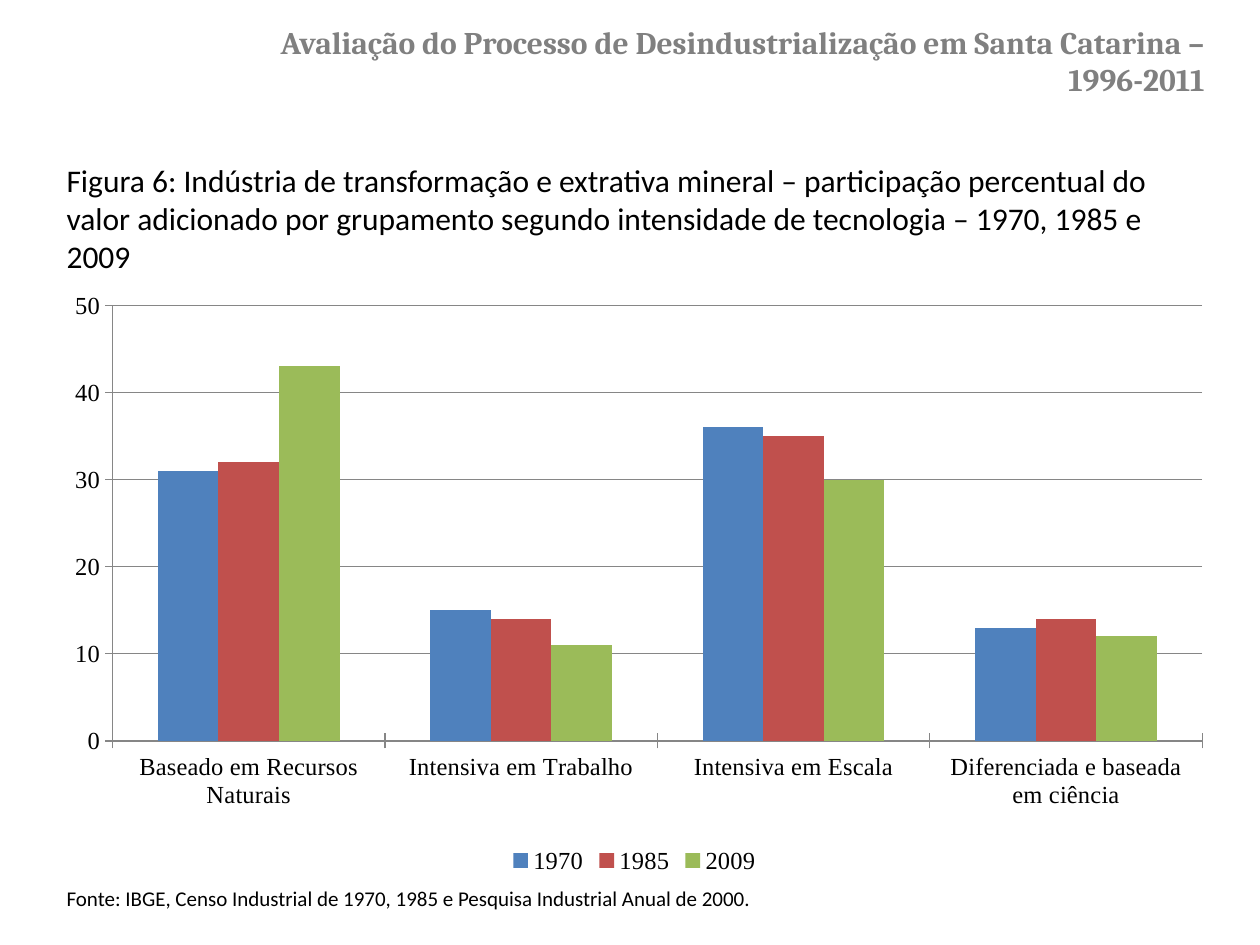
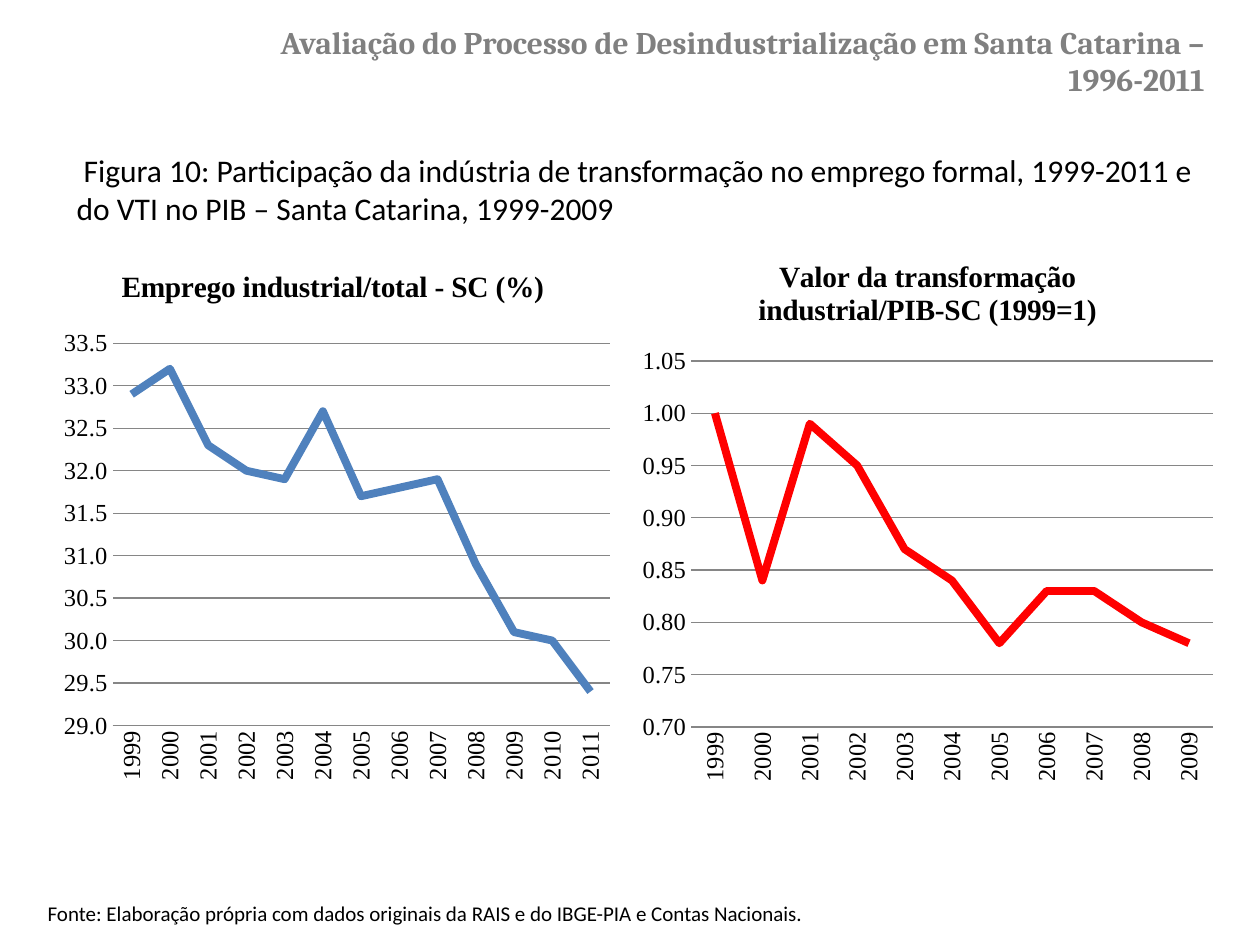
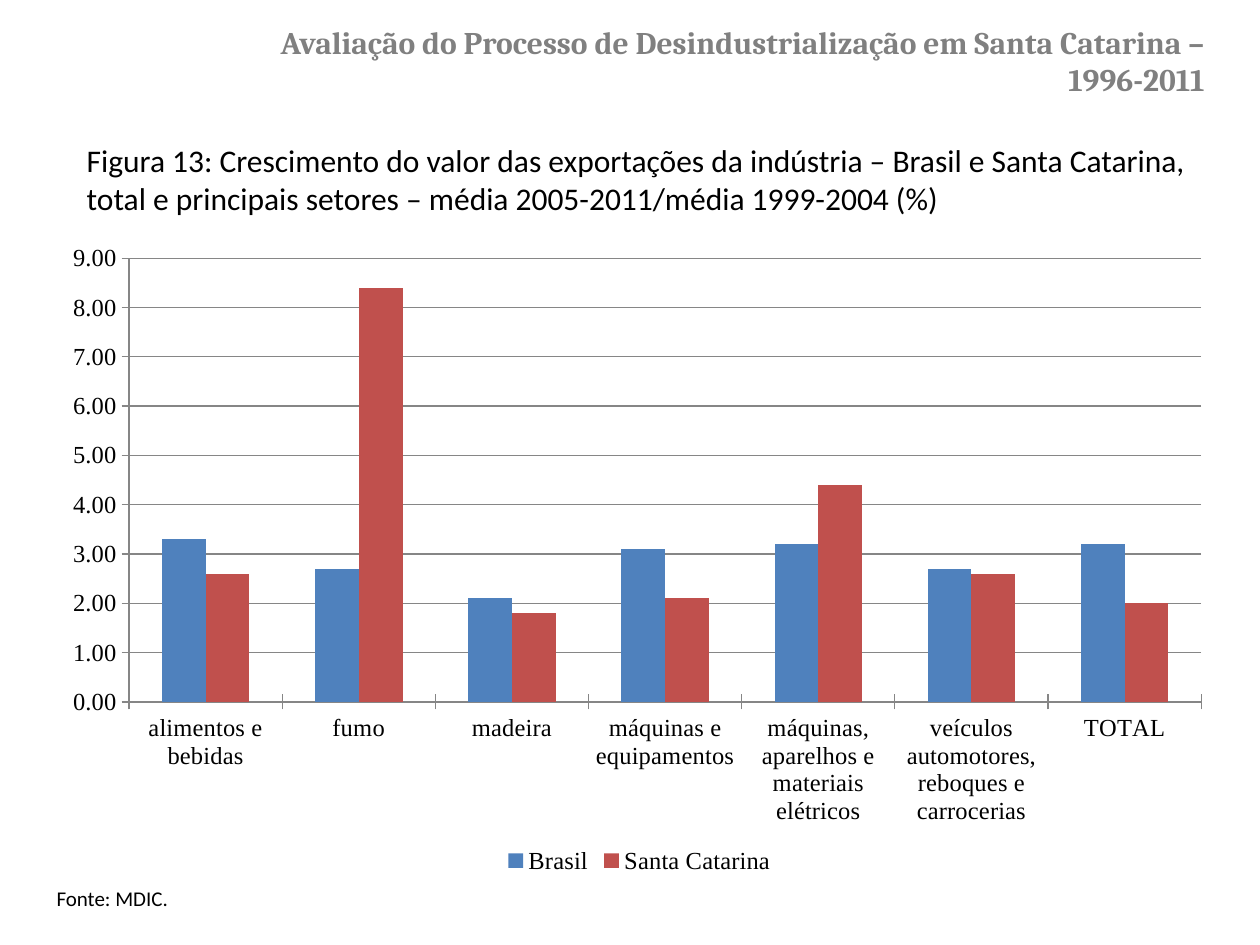
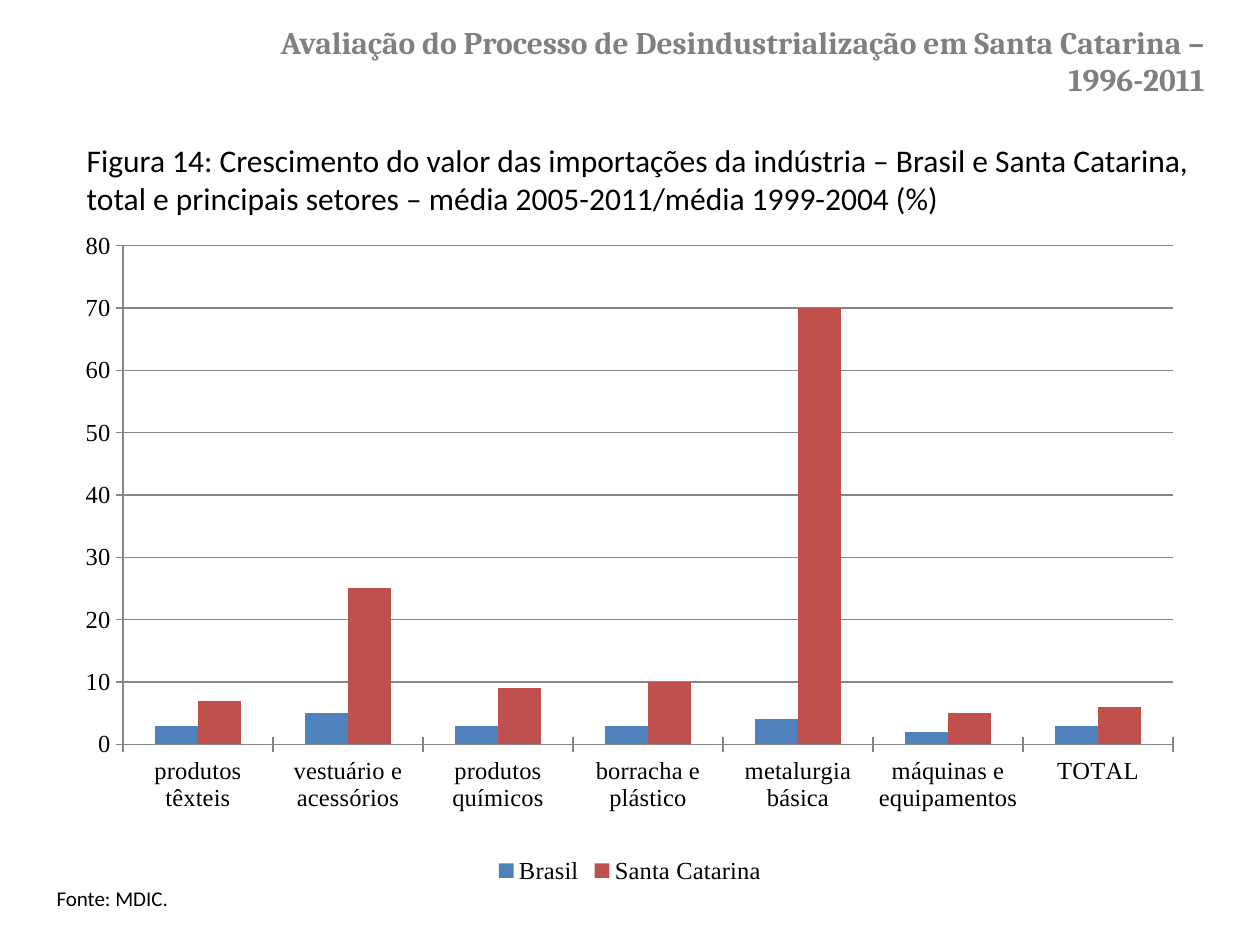
from lxml import etree
from pptx import Presentation, util as u
from pptx.chart.data import CategoryChartData
from pptx.dml.color import RGBColor
from pptx.enum import chart as chart_enums, text
from pptx.oxml.ns import qn

# Shared scale, colours and formats
PX = 9144  # 100 px to the inch
COLORS = {
    "text": "000000", "title": "808080", "grid": "868686",
    "blue": "4F81BD", "brick": "C0504D", "green": "9BBB59", "red": "FF0000",
}
TITLE = "Avaliação do Processo de Desindustrialização em Santa Catarina – 1996-2011"
FONTS = {
    "title": {"name": "Cambria", "size": u.Pt(18), "bold": True},
    "caption": {"name": "Calibri", "size": u.Pt(18)},
    "source": {"name": "Calibri", "size": u.Pt(12)},
    "chart": {"name": "Times New Roman", "size": u.Pt(14)},
    "chart_title": {"name": "Times New Roman", "size": u.Pt(16.8), "bold": True},
}
TICK = chart_enums.XL_TICK_MARK
COLUMN = chart_enums.XL_CHART_TYPE.COLUMN_CLUSTERED
LINE = chart_enums.XL_CHART_TYPE.LINE


def px(*lengths):
    return [u.Emu(length * PX) for length in lengths]


def rgb(name):
    return RGBColor.from_string(COLORS[name])


def set_attributes(target, values):
    for name, value in values.items():
        setattr(target, name, value)


def style_font(font, style, color="text"):
    set_attributes(font, FONTS[style])
    font.color.rgb = rgb(color)


def style_line(line, color, width):
    line.color.rgb = rgb(color)
    line.width = u.Pt(width)


# Text
def add_text(slide, box, wording, style, color="text", align=text.PP_ALIGN.LEFT,
             anchor=text.MSO_ANCHOR.TOP, auto_size=text.MSO_AUTO_SIZE.SHAPE_TO_FIT_TEXT):
    frame = slide.shapes.add_textbox(*px(*box)).text_frame
    set_attributes(frame, {"word_wrap": True, "vertical_anchor": anchor, "auto_size": auto_size})
    paragraph = frame.paragraphs[0]
    paragraph.alignment = align
    run = paragraph.add_run()
    run.text = wording
    style_font(run.font, style, color)


def add_figure_slide(presentation, caption_box, caption, source_box, source):
    slide = presentation.slides.add_slide(presentation.slide_layouts[6])
    add_text(slide, (209, 21, 757, 54), TITLE, "title", "title", text.PP_ALIGN.RIGHT,
             text.MSO_ANCHOR.MIDDLE, text.MSO_AUTO_SIZE.NONE)
    add_text(slide, caption_box, caption, "caption")
    add_text(slide, source_box, source, "source")
    return slide


# Charts
def set_plot_layout(chart, fractions):
    plot_area = chart._chartSpace.chart.plotArea
    for layout in plot_area.findall(qn("c:layout")):
        plot_area.remove(layout)
    layout = etree.Element(qn("c:layout"))
    manual = etree.SubElement(layout, qn("c:manualLayout"))
    settings = [("layoutTarget", "inner"), ("xMode", "edge"), ("yMode", "edge"),
                *zip("xywh", fractions)]
    for tag, value in settings:
        etree.SubElement(manual, qn(f"c:{tag}")).set("val", str(value))
    plot_area.insert(0, layout)


def add_chart(slide, kind, box, plot, categories, series, scale, number_format="General"):
    data = CategoryChartData()
    data.categories = categories
    for name, _, values in series:
        data.add_series(name, values)
    chart = slide.shapes.add_chart(kind, *px(*box), data).chart
    style_font(chart.font, "chart")
    chart.has_title = False
    chart.has_legend = False
    chart.plots[0].vary_by_categories = False
    set_plot_layout(chart, plot)

    low, high, step = scale
    tick = TICK.CROSS if kind == COLUMN else TICK.NONE
    value_axis, category_axis = chart.value_axis, chart.category_axis
    set_attributes(value_axis, {"minimum_scale": low, "maximum_scale": high, "major_unit": step,
                                "has_major_gridlines": True})
    set_attributes(value_axis.tick_labels,
                   {"number_format": number_format, "number_format_is_linked": False})
    for axis in (value_axis, category_axis):
        set_attributes(axis, {"major_tick_mark": tick, "minor_tick_mark": TICK.NONE})
        style_font(axis.tick_labels.font, "chart")
        style_line(axis.format.line, "grid", 0.75)
    style_line(value_axis.major_gridlines.format.line, "grid", 0.75)
    return chart


def add_column_chart(slide, *arguments):
    chart = add_chart(slide, COLUMN, *arguments)
    set_attributes(chart.plots[0], {"gap_width": 150, "overlap": 0})
    for drawn, (_, color, _) in zip(chart.series, arguments[3]):
        drawn.format.fill.solid()
        drawn.format.fill.fore_color.rgb = rgb(color)
    chart.has_legend = True
    set_attributes(chart.legend, {"position": chart_enums.XL_LEGEND_POSITION.BOTTOM,
                                  "include_in_layout": False})
    style_font(chart.legend.font, "chart")


def add_line_chart(slide, title, color, box, plot, years, values, scale, number_format,
                   year_format="General"):
    chart = add_chart(slide, LINE, box, plot, years, [("Series 1", color, values)],
                      scale, number_format)
    chart.has_title = True
    frame = chart.chart_title.text_frame
    frame.text = title
    style_font(frame.paragraphs[0].runs[0].font, "chart_title")
    chart.series[0].smooth = False
    style_line(chart.series[0].format.line, color, 4.5)
    chart.value_axis.format.line.fill.background()
    # Years run upwards
    category_axis = chart.category_axis
    set_attributes(category_axis.tick_labels,
                   {"number_format": year_format, "number_format_is_linked": False})
    category_axis._element.txPr.find(qn("a:bodyPr")).set("rot", "-5400000")


# Slides
def add_technology_slide(presentation):
    slide = add_figure_slide(
        presentation, (43, 123, 929, 101),
        "Figura 6: Indústria de transformação e extrativa mineral – participação percentual do "
        "valor adicionado por grupamento segundo intensidade de tecnologia – 1970, 1985 e 2009",
        (43, 698, 709, 30),
        "Fonte: IBGE, Censo Industrial de 1970, 1985 e Pesquisa Industrial Anual de 2000.")
    add_column_chart(
        slide, (35, 218, 937, 480), (0.058, 0.051, 0.923, 0.72),
        ["Baseado em Recursos Naturais", "Intensiva em Trabalho", "Intensiva em Escala",
         "Diferenciada e baseada em ciência"],
        [("1970", "blue", [31, 15, 36, 13]),
         ("1985", "brick", [32, 14, 35, 14]),
         ("2009", "green", [43, 11, 30, 12])],
        (0, 50, 10))


def add_employment_slide(presentation):
    slide = add_figure_slide(
        presentation, (51, 115, 913, 71),
        " Figura 10: Participação da indústria de transformação no emprego formal, 1999-2011 e "
        "do VTI no PIB – Santa Catarina, 1999-2009",
        (28, 710, 972, 30),
        "Fonte: Elaboração própria com dados originais da RAIS e do IBGE-PIA e Contas Nacionais.")
    add_line_chart(
        slide, "Emprego industrial/total - SC (%)", "blue",
        (28, 194, 472, 441), (0.13, 0.178, 0.836, 0.688),
        [str(year) for year in range(1999, 2012)],
        [32.9, 33.2, 32.3, 32, 31.9, 32.7, 31.7, 31.8, 31.9, 30.9, 30.1, 30, 29.4],
        (29, 33.5, 0.5), "#,##0.0")
    add_line_chart(
        slide, "Valor da transformação industrial/PIB-SC (1999=1)", "red",
        (500, 186, 472, 449), (0.103, 0.224, 0.877, 0.647),
        list(range(1999, 2010)),
        [1, 0.84, 0.99, 0.95, 0.87, 0.84, 0.78, 0.83, 0.83, 0.8, 0.78],
        (0.7, 1.05, 0.05), "#,##0.00", "#,##0")


def add_trade_slide(presentation, number, flow, box, plot, sectors, brazil, state, *axis):
    slide = add_figure_slide(
        presentation, (59, 107, 913, 71),
        f"Figura {number}: Crescimento do valor das {flow} da indústria – Brasil e Santa "
        "Catarina, total e principais setores – média 2005-2011/média 1999-2004 (%)",
        (35, 698, 591, 30), "Fonte: MDIC.")
    add_column_chart(slide, box, plot, sectors + ["TOTAL"],
                     [("Brasil", "blue", brazil), ("Santa Catarina", "brick", state)], *axis)


def main():
    presentation = Presentation()
    presentation.slide_width, presentation.slide_height = px(1000, 750)
    add_technology_slide(presentation)
    add_employment_slide(presentation)
    add_trade_slide(
        presentation, 13, "exportações", (43, 194, 929, 504), (0.064, 0.02, 0.916, 0.7),
        ["alimentos e bebidas", "fumo", "madeira", "máquinas e equipamentos",
         "máquinas, aparelhos e materiais elétricos",
         "veículos automotores, reboques e carrocerias"],
        [3.3, 2.7, 2.1, 3.1, 3.2, 2.7, 3.2], [2.6, 8.4, 1.8, 2.1, 4.4, 2.6, 2],
        (0, 9, 1), "0.00")
    add_trade_slide(
        presentation, 14, "importações", (51, 178, 898, 528), (0.052, 0.032, 0.928, 0.75),
        ["produtos têxteis", "vestuário e acessórios", "produtos químicos",
         "borracha e plástico", "metalurgia básica", "máquinas e equipamentos"],
        [3, 5, 3, 3, 4, 2, 3], [7, 25, 9, 10, 70, 5, 6],
        (0, 80, 10))
    presentation.save("out.pptx")


if __name__ == "__main__":
    main()
